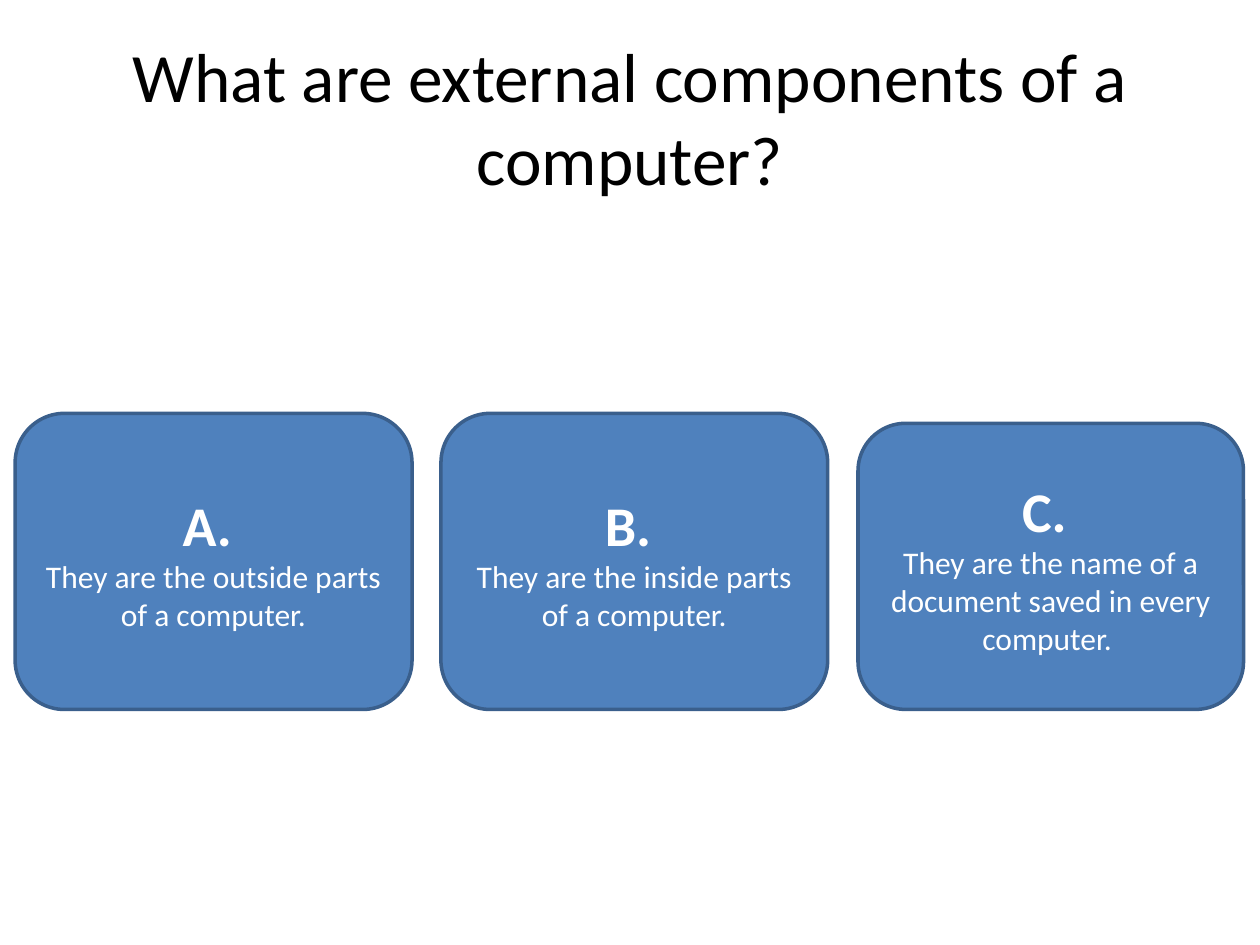
from pptx import Presentation
from pptx.dml.color import RGBColor
from pptx.enum.shapes import MSO_SHAPE
from pptx.enum.text import MSO_ANCHOR, PP_ALIGN
from pptx.util import Pt

ROUND = MSO_SHAPE.ROUNDED_RECTANGLE
MIDDLE = MSO_ANCHOR.MIDDLE
CENTER = PP_ALIGN.CENTER
FONT = "Calibri"
BASE = 405.4  # shared bottom edge of the answer cards

# Left, top, width, letter, answer
CARDS = [
    (8.64, 236.2, 226.8, "A. ", "They are the outside parts of a computer."),
    (252, 236.2, 221, "B. ", "They are the inside parts of a computer."),
    (490.3, 241.9, 220.3, "C. ",
     "They are the name of a document saved in every computer. "),
]


def color(code):
    return RGBColor.from_string(code)


def style(para, size, code, bold=False):
    para.alignment = CENTER
    for run in para.runs:
        font = run.font
        font.name = FONT
        font.size = Pt(size)
        font.bold = bold
        font.color.rgb = color(code)


def add_title(slide, text):
    box = slide.shapes.add_textbox(Pt(36), Pt(21.6), Pt(648), Pt(90))
    frame = box.text_frame
    frame.word_wrap = True
    frame.vertical_anchor = MIDDLE
    frame.text = text
    style(frame.paragraphs[0], 39.6, "000000")


def add_card(slide, left, top, width, letter, answer):
    card = slide.shapes.add_shape(
        ROUND, Pt(left), Pt(top), Pt(width), Pt(BASE - top))
    card.shadow.inherit = False
    card.fill.solid()
    card.fill.fore_color.rgb = color("4F81BD")
    card.line.color.rgb = color("3A5F8C")
    card.line.width = Pt(2)
    frame = card.text_frame
    frame.word_wrap = True
    frame.vertical_anchor = MIDDLE
    frame.text = f"{letter}\n{answer}"
    head, body = frame.paragraphs
    style(head, 32, "FFFFFF", bold=True)
    style(body, 18, "FFFFFF")


def main():
    deck = Presentation()
    deck.slide_width = Pt(720)
    deck.slide_height = Pt(540)
    slide = deck.slides.add_slide(deck.slide_layouts[6])

    # Question
    add_title(slide, "What are external components of a computer?")

    # Answers
    for card in CARDS:
        add_card(slide, *card)

    deck.save("out.pptx")


if __name__ == "__main__":
    main()
